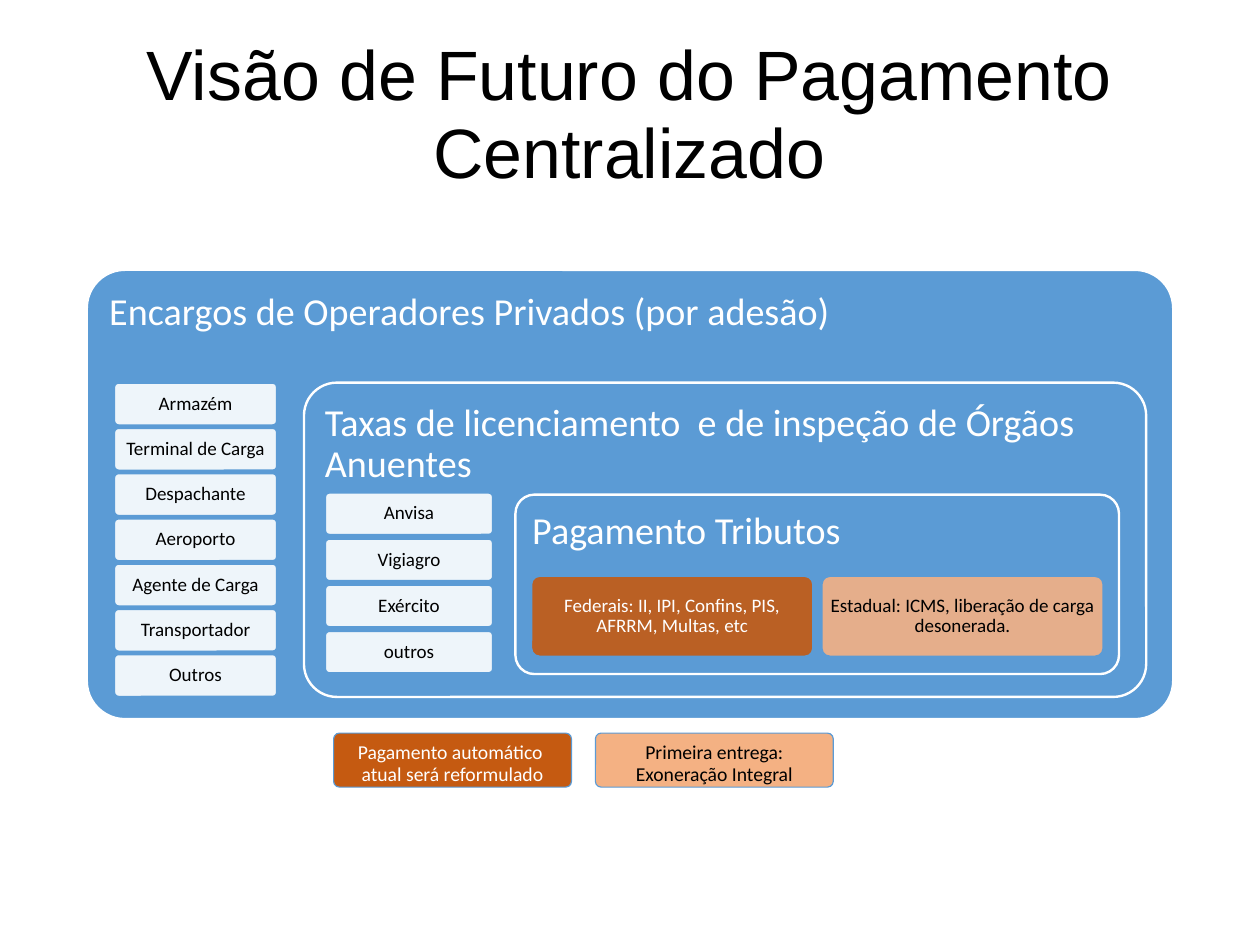
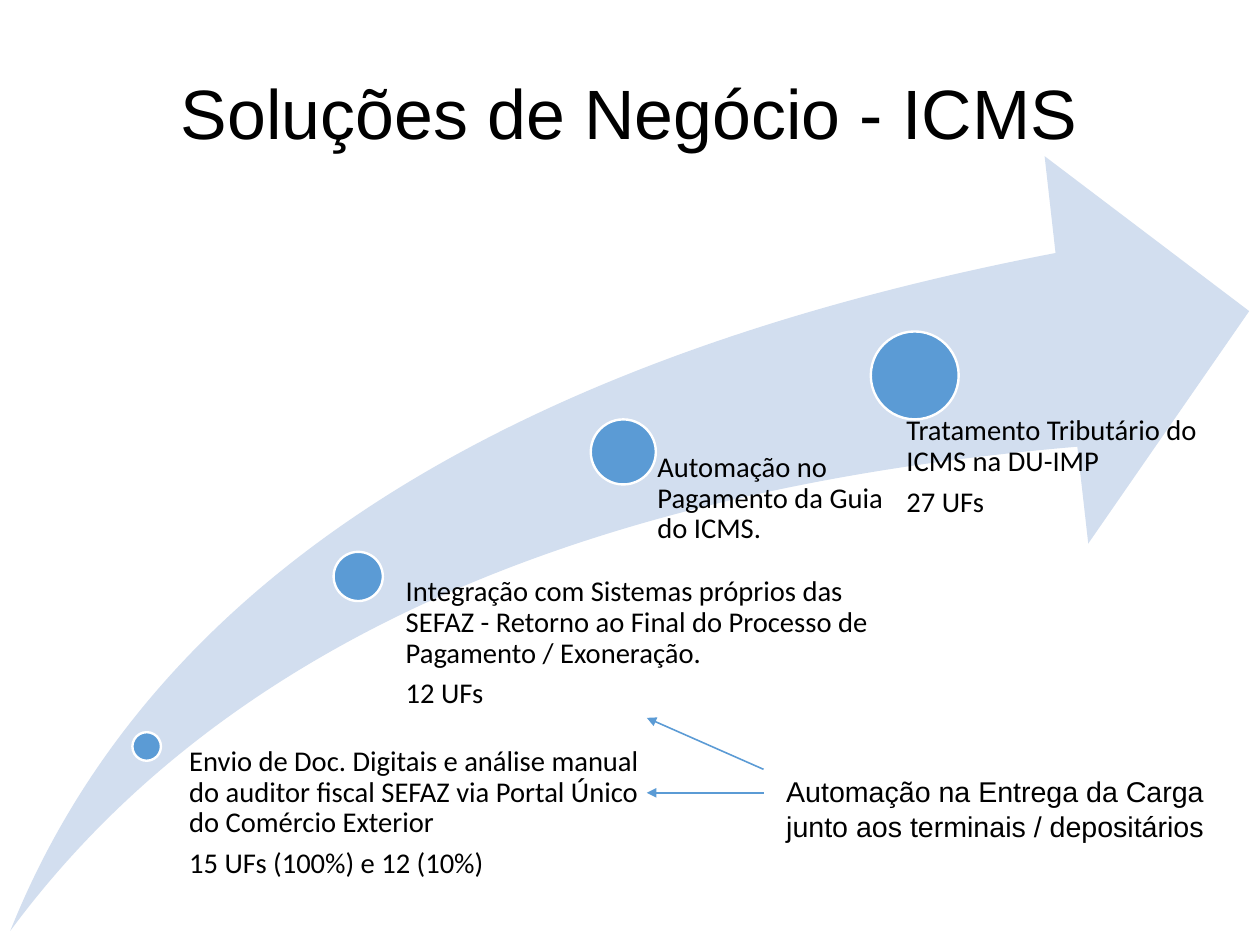
from lxml import etree
from pptx import Presentation
from pptx.dml.color import RGBColor
from pptx.enum import shapes, text
from pptx.oxml.ns import qn
from pptx.util import Pt

BLUE = RGBColor(0x5B, 0x9B, 0xD5)
PALE_BLUE = RGBColor(0xD2, 0xDE, 0xEF)
RUST = RGBColor(0xC5, 0x5A, 0x11)
PEACH = RGBColor(0xF4, 0xB1, 0x83)
WHITE = RGBColor(0xFF, 0xFF, 0xFF)
BLACK = RGBColor(0, 0, 0)

SLIDE_SIZE = (793.75, 595.25)
LEFT, CENTER = text.PP_ALIGN.LEFT, text.PP_ALIGN.CENTER
TOP, MIDDLE = text.MSO_ANCHOR.TOP, text.MSO_ANCHOR.MIDDLE
ROUND, OVAL = shapes.MSO_SHAPE.ROUNDED_RECTANGLE, shapes.MSO_SHAPE.OVAL

VISION_TITLE = "Visão de Futuro do Pagamento Centralizado"
LAYERS = [
    ("Encargos de Operadores Privados (por adesão)", (54.7, 170, 684.4, 283), 0.085),
    ("Taxas de licenciamento  e de inspeção de Órgãos Anuentes",
     (191.5, 241, 530.6, 198), 0.105),
    ("Pagamento Tributos", (324.7, 311.6, 380.2, 113), 0.105),
]
COLUMNS = [
    (["Armazém", "Terminal de Carga", "Despachante", "Aeroporto", "Agente de Carga",
      "Transportador", "Outros"], (71.8, 241, 102.8, 27), 28.5),
    (["Anvisa", "Vigiagro", "Exército", "outros"], (204.7, 310.2, 106, 26.8), 29.05),
]
TAXES = [
    ("Federais: II, IPI, Confins, PIS, AFRRM, Multas, etc", RUST, WHITE),
    ("Estadual: ICMS, liberação de carga desonerada.", PEACH, BLACK),
]
LEGEND = [
    ("Pagamento automático  atual será reformulado", RUST, WHITE),
    ("Primeira entrega: Exoneração Integral", PEACH, BLACK),
]

ICMS_TITLE = "Soluções de Negócio - ICMS"
STAGES = [
    (["Envio de Doc. Digitais e análise manual do auditor fiscal SEFAZ via Portal Único "
      "do Comércio Exterior", "15 UFs (100%) e 12 (10%)"],
     (83.4, 461.2, 18), (119.2, 470.2, 291, 90)),
    (["Integração com Sistemas próprios das SEFAZ - Retorno ao Final do Processo de "
      "Pagamento / Exoneração.", "12 UFs"],
     (210.2, 347.6, 31), (255.6, 363.3, 298.8, 90)),
    (["Automação no Pagamento da Guia do ICMS."],
     (372.2, 264.2, 41), (414.2, 285, 162.7, 65)),
    (["Tratamento Tributário do ICMS na DU-IMP", "27 UFs"],
     (548.6, 208.8, 55.4), (571, 262.2, 217.4, 70)),
]
DELIVERY = "Automação na Entrega da Carga junto aos terminais / depositários"
DELIVERY_ARROWS = [((481, 484.6), (407.5, 452.2)), ((481, 499.4), (407.5, 499.4))]


def points(values):
    return [Pt(v) for v in values]


def write(sp, lines, size, color=BLACK, font="Calibri", align=LEFT, anchor=TOP,
          insets=(0, 0, 0, 0), spacing=0.9, after=0):
    tf = sp.text_frame
    tf.text = "\n".join(lines)
    tf.word_wrap = True
    tf.auto_size = text.MSO_AUTO_SIZE.NONE
    tf.vertical_anchor = anchor
    tf.margin_left, tf.margin_top, tf.margin_right, tf.margin_bottom = points(insets)
    for p in tf.paragraphs:
        p.alignment, p.line_spacing = align, spacing
        p.space_before, p.space_after = Pt(0), Pt(after)
        for r in p.runs:
            r.font.name, r.font.size = font, Pt(size)
            r.font.color.rgb = color


def add_shape(s, kind, box, fill, line=None, width=1.5, adj=(), alpha=None):
    sp = s.shapes.add_shape(kind, *points(box))
    sp.shadow.inherit = False
    sp.fill.solid()
    sp.fill.fore_color.rgb = fill
    if line is None:
        sp.line.fill.background()
    else:
        sp.line.color.rgb = line
        sp.line.width = Pt(width)
    for i, value in enumerate(adj):
        sp.adjustments[i] = value
    if alpha:
        clr = sp._element.spPr.find(qn("a:solidFill"))[0]
        etree.SubElement(clr, qn("a:alpha")).set("val", str(alpha * 1000))
    return sp


def add_chip(s, label, box, fill, color=BLACK, size=12, width=1.5, alpha=90,
             insets=(3.6, 3.6, 3.6, 3.6)):
    sp = add_shape(s, ROUND, box, fill, BLUE, width, [0.105], alpha)
    write(sp, [label], size, color, align=CENTER, anchor=MIDDLE, insets=insets)


def add_arrow(s, start, end):
    cx = s.shapes.add_connector(shapes.MSO_CONNECTOR.STRAIGHT, *points(start + end))
    cx.line.color.rgb = BLUE
    cx.line.width = Pt(1)
    props = cx._element.spPr
    etree.SubElement(props.find(qn("a:ln")), qn("a:tailEnd")).set("type", "triangle")
    etree.SubElement(props, qn("a:effectLst"))


def add_slide(prs, title):
    s = prs.slides.add_slide(prs.slide_layouts[5])
    sp = s.shapes.title
    sp.left, sp.top, sp.width, sp.height = points((39.6, 23.5, 714.2, 99.2))
    write(sp, [title], 44, font="Arial", align=CENTER, anchor=MIDDLE, spacing=0.93)
    return s


def build_vision(prs):
    s = add_slide(prs, VISION_TITLE)
    for label, box, adj in LAYERS:
        sp = add_shape(s, ROUND, box, BLUE, WHITE, adj=[adj])
        write(sp, [label], 24, WHITE, insets=(7.2, 7.2, 7.2, 7.2))
    for labels, (x, y, w, h), pitch in COLUMNS:
        for i, label in enumerate(labels):
            add_chip(s, label, (x, y + i * pitch, w, h), WHITE)
    for i, (label, fill, color) in enumerate(TAXES):
        add_chip(s, label, (334.6 + i * 182.9, 362.7, 177.8, 51), fill, color)
    for i, (label, fill, color) in enumerate(LEGEND):
        add_chip(s, label, (210.2 + i * 164.9, 461.8, 149.8, 34), fill, color, 12.4, 0.75,
                 None, (8.4, 7.6, 8.4, 2.6))


def build_icms(prs):
    s = add_slide(prs, ICMS_TITLE)
    add_shape(s, shapes.MSO_SHAPE.SWOOSH_ARROW, (6.5, 98.4, 780.5, 488), PALE_BLUE,
              adj=[0.25, 0.25])
    for lines, (x, y, size), box in STAGES:
        add_shape(s, OVAL, (x, y, size, size), BLUE, WHITE)
        write(s.shapes.add_textbox(*points(box)), lines, 18, after=6)
    note = s.shapes.add_textbox(*points((488.2, 484.2, 300.2, 51)))
    write(note, [DELIVERY], 18, font="Arial", insets=(7.2, 3.6, 7.2, 3.6), spacing=1.0)
    for start, end in DELIVERY_ARROWS:
        add_arrow(s, start, end)


def main():
    prs = Presentation()
    prs.slide_width, prs.slide_height = points(SLIDE_SIZE)
    build_vision(prs)
    build_icms(prs)
    prs.save("out.pptx")


if __name__ == "__main__":
    main()
